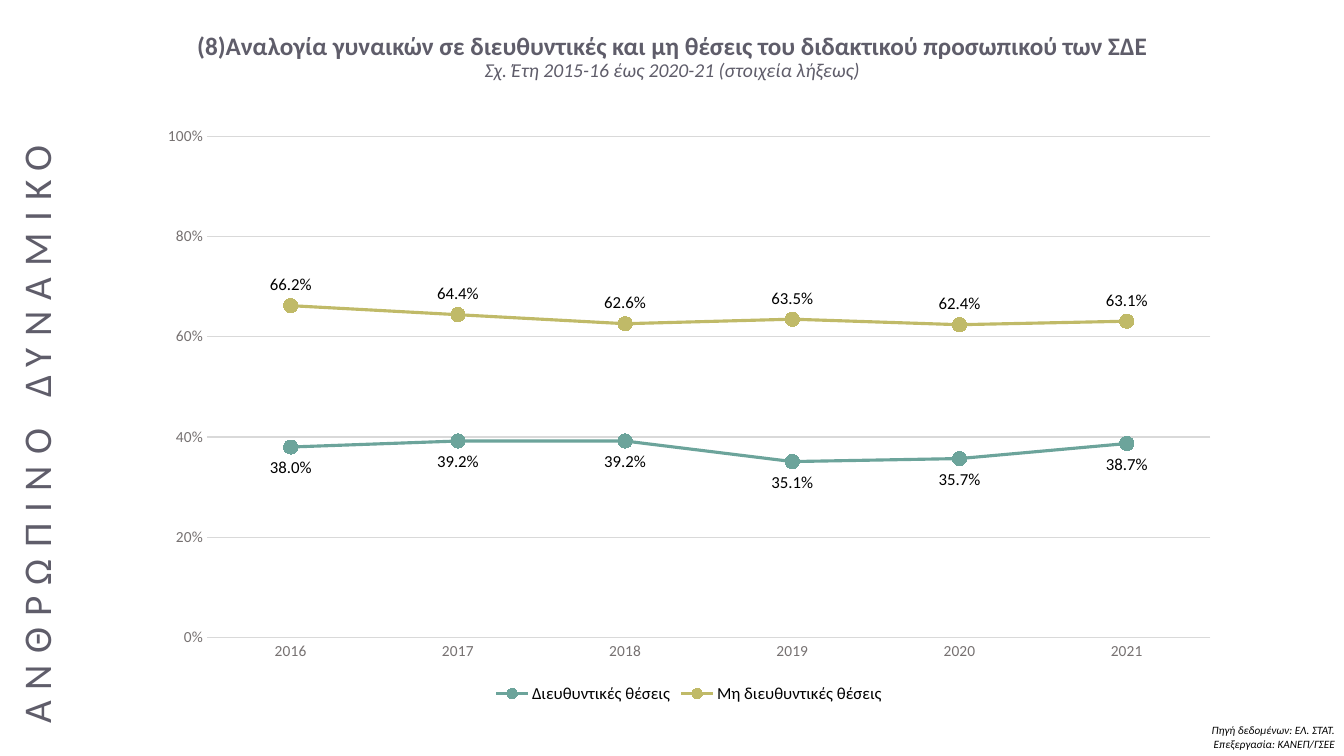
from pptx import Presentation
from pptx.chart.data import CategoryChartData
from pptx.dml.color import RGBColor
from pptx.enum.chart import (XL_CHART_TYPE, XL_LABEL_POSITION, XL_LEGEND_POSITION,
                             XL_MARKER_STYLE, XL_TICK_MARK)
from pptx.enum.text import MSO_ANCHOR, PP_ALIGN
from pptx.util import Inches, Pt

FONT = "Calibri"
BLACK, SLATE, GREY, RULE = "000000", "5F5D6A", "767171", "D9D9D9"
YEARS = ["2016", "2017", "2018", "2019", "2020", "2021"]
SERIES = [
    ("Διευθυντικές θέσεις", [0.380, 0.392, 0.392, 0.351, 0.357, 0.387],
     "6CA49B", XL_LABEL_POSITION.BELOW),
    ("Μη διευθυντικές θέσεις", [0.662, 0.644, 0.626, 0.635, 0.624, 0.631],
     "C0BA68", XL_LABEL_POSITION.ABOVE),
]


def rgb(color):
    return RGBColor.from_string(color)


def style(font, size, color, bold=False, italic=False):
    font.name, font.size, font.bold, font.italic = FONT, Pt(size), bold, italic
    font.color.rgb = rgb(color)


def add_text(s, box, text, align, anchor=MSO_ANCHOR.TOP, spacing=None):
    """Add a one-paragraph text box and return the shape and its runs."""
    sp = s.shapes.add_textbox(*map(Inches, box))
    tf = sp.text_frame
    tf.word_wrap, tf.vertical_anchor = True, anchor
    p = tf.paragraphs[0]
    p.text = text
    p.alignment, p.line_spacing = align, spacing
    return sp, p.runs


def add_title(s, box):
    _, (heading, period) = add_text(
        s, box,
        "(8)Αναλογία γυναικών σε διευθυντικές και μη θέσεις του διδακτικού προσωπικού των ΣΔΕ\v"
        "Σχ. Έτη 2015-16 έως 2020-21 (στοιχεία λήξεως)",
        PP_ALIGN.CENTER, MSO_ANCHOR.MIDDLE, 0.9)
    style(heading.font, 18, SLATE, bold=True)
    style(period.font, 14, SLATE, italic=True)


def add_side_heading(s, box):
    sp, (r,) = add_text(s, box, "ΑΝΘΡΩΠΙΝΟ ΔΥΝΑΜΙΚΟ",
                        PP_ALIGN.CENTER, MSO_ANCHOR.MIDDLE, 0.9)
    sp.rotation = 270
    style(r.font, 28, SLATE)
    r.font._element.set("spc", "800")


def add_credits(s, box):
    _, runs = add_text(s, box, "Πηγή δεδομένων: ΕΛ. ΣΤΑΤ.\vΕπεξεργασία: ΚΑΝΕΠ/ΓΣΕΕ",
                       PP_ALIGN.RIGHT)
    for r in runs:
        style(r.font, 8, BLACK, italic=True)


def format_axes(chart):
    years, shares = chart.category_axis, chart.value_axis
    for axis in (years, shares):
        axis.major_tick_mark = axis.minor_tick_mark = XL_TICK_MARK.NONE
        style(axis.tick_labels.font, 11, GREY)
    shares.minimum_scale, shares.maximum_scale, shares.major_unit = 0, 1, 0.2
    shares.tick_labels.number_format = "0%"
    shares.tick_labels.number_format_is_linked = False
    shares.format.line.fill.background()
    for line in (years.format.line, shares.major_gridlines.format.line):
        line.color.rgb, line.width = rgb(RULE), Pt(0.75)


def format_series(series, color, position):
    series.smooth = False
    series.format.line.color.rgb, series.format.line.width = rgb(color), Pt(2.25)
    marker = series.marker
    marker.style, marker.size = XL_MARKER_STYLE.CIRCLE, 10
    marker.format.fill.solid()
    marker.format.fill.fore_color.rgb = rgb(color)
    marker.format.line.color.rgb = rgb(color)
    labels = series.data_labels
    labels.show_value, labels.position = True, position
    labels.number_format, labels.number_format_is_linked = "0.0%", False
    style(labels.font, 12, BLACK)


def add_share_chart(s, box):
    data = CategoryChartData(number_format="0.0%")
    data.categories = YEARS
    for name, values, _, _ in SERIES:
        data.add_series(name, values)
    chart = s.shapes.add_chart(XL_CHART_TYPE.LINE_MARKERS, *map(Inches, box), data).chart
    style(chart.font, 10, BLACK)
    chart.has_title = False
    chart.has_legend = True
    chart.legend.position = XL_LEGEND_POSITION.BOTTOM
    chart.legend.include_in_layout = False
    style(chart.legend.font, 12, BLACK)
    format_axes(chart)
    plot = chart.plots[0]
    plot.vary_by_categories = False
    for series, (_, _, color, position) in zip(plot.series, SERIES):
        format_series(series, color, position)


def main():
    prs = Presentation()
    prs.slide_width, prs.slide_height = Inches(13.33), Inches(7.5)
    s = prs.slides.add_slide(prs.slide_layouts[6])
    add_credits(s, (7.39, 7.13, 5.95, 0.37))
    add_title(s, (0.92, 0, 11.5, 1.14))
    add_share_chart(s, (1.45, 1.14, 10.77, 5.88))
    add_side_heading(s, (-3, 3.74, 6.76, 1.14))
    prs.save("out.pptx")


if __name__ == "__main__":
    main()
